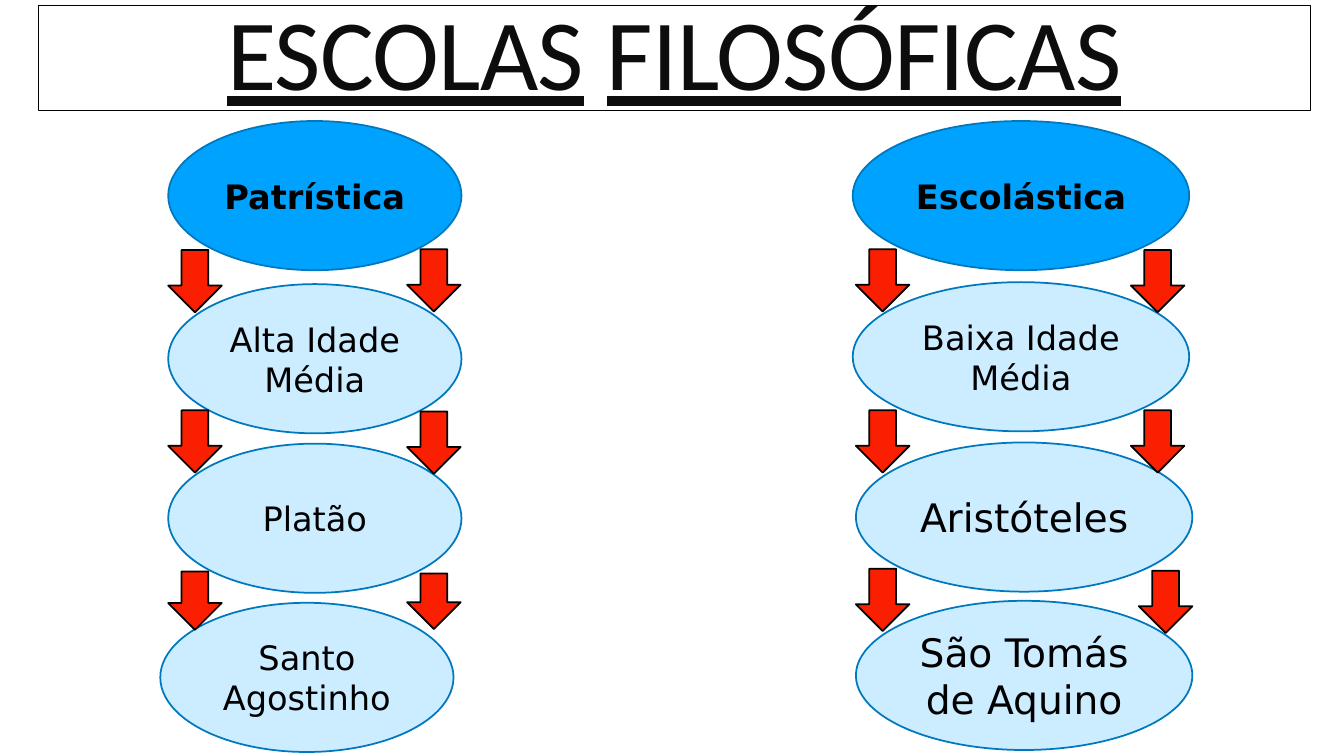
from pptx import Presentation
from pptx.dml.color import RGBColor
from pptx.enum.shapes import MSO_SHAPE
from pptx.enum.text import MSO_ANCHOR, PP_ALIGN
from pptx.util import Cm, Pt

RECTANGLE = MSO_SHAPE.RECTANGLE
OVAL = MSO_SHAPE.OVAL
DOWN_ARROW = MSO_SHAPE.DOWN_ARROW
MIDDLE = MSO_ANCHOR.MIDDLE
CENTER = PP_ALIGN.CENTER

BLACK, BLUE, PALE_BLUE, RED = "000000", "00A2FF", "CCECFF", "FA1F00"
OUTLINE = "0078BD"
STEP_HEIGHT = 3.76
ARROW_WIDTH, ARROW_HEIGHT = 1.35, 1.57

# Steps: text, size, offset x, offset y; arrows: offset x, offset y, height (cm)
PATRISTICA = {
    "box": (4.24, 3.05, 7.39),
    "steps": [
        ("Patrística", 24, 0, 0),
        ("Alta Idade Média", 24, 0, 4.11),
        ("Platão", 24, 0, 8.13),
        ("Santo Agostinho", 24, -0.2, 12.14),
    ],
    "arrows": [
        (0, 3.25, ARROW_HEIGHT), (6.02, 3.23, ARROW_HEIGHT),
        (0, 7.29, ARROW_HEIGHT), (6.02, 7.32, ARROW_HEIGHT),
        (0, 11.35, 1.47), (6.02, 11.4, 1.4),
    ],
}
ESCOLASTICA = {
    "box": (21.49, 3.05, 8.48),
    "steps": [
        ("Escolástica", 24, 0, 0),
        ("Baixa Idade Média", 24, 0, 4.06),
        ("Aristóteles", 28, 0.08, 8.1),
        ("São Tomás de Aquino", 28, 0.08, 12.09),
    ],
    "arrows": [
        (0.08, 3.23, ARROW_HEIGHT), (7.01, 3.25, ARROW_HEIGHT),
        (0.08, 7.29, ARROW_HEIGHT), (7.01, 7.29, ARROW_HEIGHT),
        (0.08, 11.28, ARROW_HEIGHT), (7.21, 11.33, ARROW_HEIGHT),
    ],
}


def color(hex_value):
    return RGBColor.from_string(hex_value)


def set_attributes(target, values):
    for name, value in values.items():
        setattr(target, name, value)


def add_figure(slide, kind, box, fill, line, line_width):
    figure = slide.shapes.add_shape(kind, *(Cm(length) for length in box))
    figure.shadow.inherit = False
    if fill:
        figure.fill.solid()
        figure.fill.fore_color.rgb = color(fill)
    else:
        figure.fill.background()
    figure.line.color.rgb = color(line)
    figure.line.width = Pt(line_width)
    return figure


def add_run(paragraph, text, hex_color, **font_values):
    run = paragraph.add_run()
    run.text = text
    set_attributes(run.font, font_values)
    run.font.color.rgb = color(hex_color)
    return run


def add_title(slide, box):
    title = add_figure(slide, RECTANGLE, box, None, BLACK, 0.75)
    set_attributes(title.text_frame, {
        "word_wrap": True, "vertical_anchor": MIDDLE,
        "margin_left": 0, "margin_right": 0,
        "margin_top": Cm(0.13), "margin_bottom": Cm(0.13),
    })
    heading = title.text_frame.paragraphs[0]
    set_attributes(heading, {"alignment": CENTER, "line_spacing": 0.9})
    for word, underlined in (("ESCOLAS", True), (" ", False), ("FILOSÓFICAS", True)):
        run = add_run(heading, word, "0D0D0D", name="Calibri", size=Pt(72),
                      bold=False, underline=underlined)
        run._r.get_or_add_rPr().set("spc", "-50")


def add_school(slide, box, steps, arrows):
    left, top, width = box

    # Chain of ellipses, the school itself on top
    for index, (text, size, dx, dy) in enumerate(steps):
        is_school = index == 0
        step = add_figure(slide, OVAL, (left + dx, top + dy, width, STEP_HEIGHT),
                          BLUE if is_school else PALE_BLUE, OUTLINE, 1.25)
        set_attributes(step.text_frame, {"word_wrap": True, "vertical_anchor": MIDDLE})
        label = step.text_frame.paragraphs[0]
        label.alignment = CENTER
        add_run(label, text, BLACK, name="DejaVu Sans", size=Pt(size), bold=is_school)

    # Pairs of arrows between the ellipses
    for dx, dy, height in arrows:
        add_figure(slide, DOWN_ARROW, (left + dx, top + dy, ARROW_WIDTH, height),
                   RED, BLACK, 1.25)


def main():
    deck = Presentation()
    set_attributes(deck, {"slide_width": Cm(33.87), "slide_height": Cm(19.05)})
    slide = deck.slides.add_slide(deck.slide_layouts[6])
    add_title(slide, (0.97, 0.15, 32.05, 2.64))
    for school in (PATRISTICA, ESCOLASTICA):
        add_school(slide, **school)
    deck.save("out.pptx")


if __name__ == "__main__":
    main()
